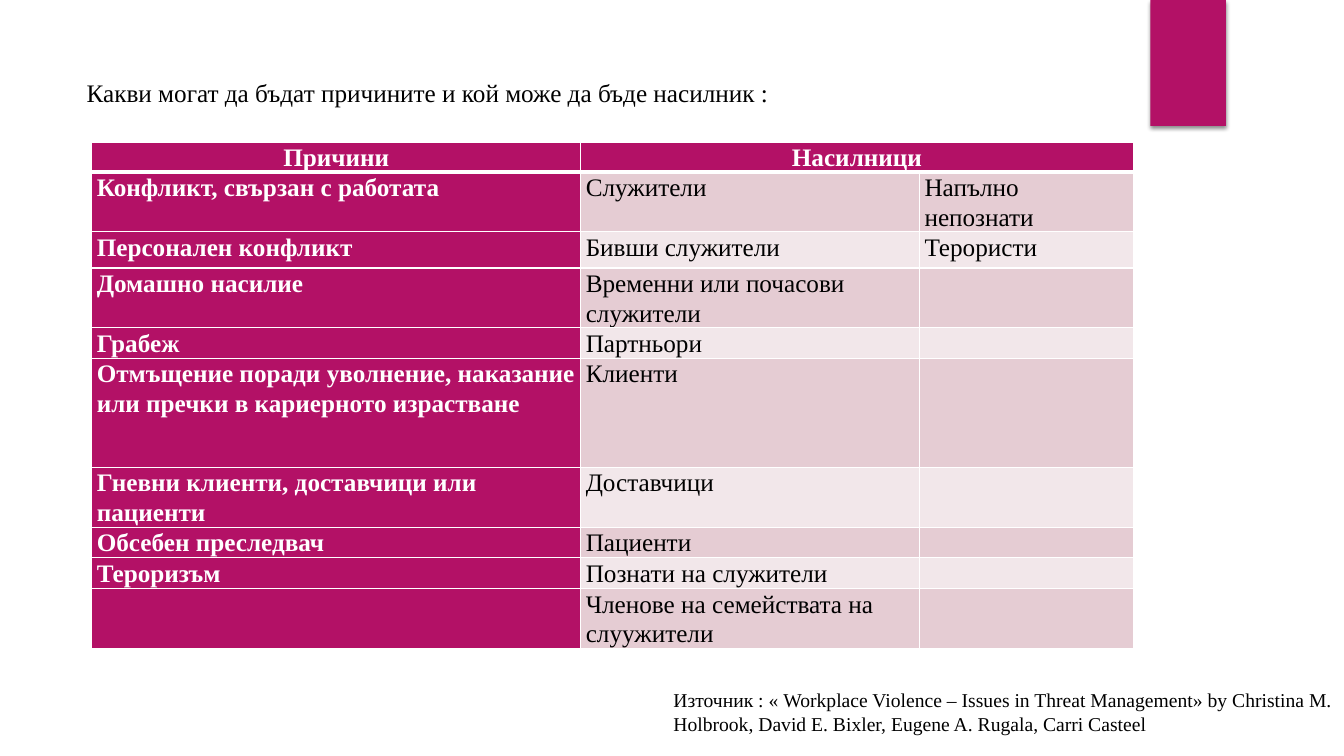
from lxml import etree
from pptx import Presentation
from pptx.dml.color import RGBColor
from pptx.enum.shapes import MSO_SHAPE
from pptx.enum.text import MSO_ANCHOR, MSO_AUTO_SIZE, PP_ALIGN
from pptx.oxml.ns import qn
from pptx.util import Inches, Pt

RECTANGLE = MSO_SHAPE.RECTANGLE
TOP = MSO_ANCHOR.TOP
LEFT, CENTER = PP_ALIGN.LEFT, PP_ALIGN.CENTER
NO_AUTOFIT = MSO_AUTO_SIZE.NONE

TITLE_ONLY_LAYOUT = 5
FONT_NAME = "Times New Roman"
ACCENT, WHITE, BLACK = "B31166", "FFFFFF", "000000"
BANDS = ("E5CCD3", "F2E7EA")

TITLE = "Какви могат да бъдат причините и кой може да бъде насилник :"
SOURCE = ("Източник : « Workplace Violence – Issues in Threat Management» "
          "by Christina M. Holbrook, David E. Bixler, Eugene A. Rugala, Carri Casteel")
COLUMN_WIDTHS = (4.85, 3.36, 2.12)
ROWS = [  # height, cause, two columns of offenders
    (0.17, "Причини", "Насилници", ""),
    (0.36, "Конфликт, свързан с работата", "Служители", "Напълно непознати"),
    (0.36, "Персонален конфликт", "Бивши служители", "Терористи"),
    (0.36, "Домашно насилие", "Временни или почасови служители", ""),
    (0.17, "Грабеж", "Партньори", ""),
    (1.08, "Отмъщение поради уволнение, наказание или пречки в кариерното израстване",
     "Клиенти", ""),
    (0.54, "Гневни клиенти, доставчици или пациенти", "Доставчици", ""),
    (0.17, "Обсебен преследвач", "Пациенти", ""),
    (0.17, "Тероризъм", "Познати на служители", ""),
    (0.36, "", "Членове на семействата на слуужители", ""),
]


def color(hex_value):
    return RGBColor.from_string(hex_value)


def set_attributes(target, values):
    for name, value in values.items():
        setattr(target, name, value)


def write_text(text_frame, text, size, text_color=BLACK, bold=False, **paragraph_format):
    paragraph = text_frame.paragraphs[0]
    set_attributes(paragraph, paragraph_format)
    if text:
        run = paragraph.add_run()
        run.text = text
        set_attributes(run.font, {"name": FONT_NAME, "size": Pt(size), "bold": bold})
        run.font.color.rgb = color(text_color)


def add_color(parent, hex_value):
    return etree.SubElement(parent, qn("a:srgbClr"), val=hex_value)


def add_title(slide):
    title = slide.shapes.title
    set_attributes(title, {"left": Inches(0.76), "top": Inches(0.72),
                           "width": Inches(10.07), "height": Inches(1.62)})
    set_attributes(title.text_frame, {"word_wrap": True, "vertical_anchor": TOP,
                                      "auto_size": NO_AUTOFIT})
    write_text(title.text_frame, TITLE, 18, alignment=LEFT, line_spacing=1.0)


def add_accent_block(slide):
    block = slide.shapes.add_shape(RECTANGLE, Inches(11.41), 0, Inches(0.75), Inches(1.25))
    block.fill.solid()
    block.fill.fore_color.rgb = color(ACCENT)
    block.line.fill.background()
    # Soft shadow below the block
    block.shadow.inherit = False
    effects = block.element.spPr.find(qn("a:effectLst"))
    shadow = etree.SubElement(effects, qn("a:outerShdw"), blurRad=str(Pt(3)),
                              dist=str(Pt(2)), dir="5400000", rotWithShape="0")
    etree.SubElement(add_color(shadow, BLACK), qn("a:alpha"), val="45000")


def add_borders(cell, widths):
    properties = cell._tc.get_or_add_tcPr()
    for side, width in widths.items():
        line = etree.SubElement(properties, qn(f"a:ln{side}"), w=str(Pt(width)))
        add_color(etree.SubElement(line, qn("a:solidFill")), WHITE)


def format_cell(cell, row, column, text):
    is_header = row == 0
    is_accent = is_header or column == 0
    set_attributes(cell, {"margin_left": Inches(0.05), "margin_right": Inches(0.05),
                          "margin_top": 0, "margin_bottom": 0})
    add_borders(cell, {"L": 1, "R": 1, "T": 3 if row == 1 else 1, "B": 3 if is_header else 1})
    cell.fill.solid()
    cell.fill.fore_color.rgb = color(ACCENT if is_accent else BANDS[(row - 1) % 2])
    write_text(cell.text_frame, text, 18, WHITE if is_accent else BLACK, is_accent,
               alignment=CENTER if is_header else LEFT,
               line_spacing=1.07, space_after=Pt(8))


def add_causes_table(slide):
    frame = slide.shapes.add_table(len(ROWS), len(COLUMN_WIDTHS), Inches(0.91), Inches(1.41),
                                   Inches(10.32), Inches(5.12))
    table = frame.table
    for column, width in zip(table.columns, COLUMN_WIDTHS):
        column.width = Inches(width)
    for row, (height, *texts) in enumerate(ROWS):
        table.rows[row].height = Inches(height)
        for column, text in enumerate(texts):
            format_cell(table.cell(row, column), row, column, text)
    table.cell(0, 1).merge(table.cell(0, 2))
    frame.height = Inches(5.12)


def add_source_note(slide):
    note = slide.shapes.add_textbox(Inches(6.58), Inches(6.78), Inches(7.25), Inches(0.57))
    note.text_frame.word_wrap = True
    write_text(note.text_frame, SOURCE, 14)


def main():
    presentation = Presentation()
    presentation.slide_width = Inches(13.33)
    presentation.slide_height = Inches(7.5)
    slide = presentation.slides.add_slide(presentation.slide_layouts[TITLE_ONLY_LAYOUT])
    add_title(slide)
    add_accent_block(slide)
    add_causes_table(slide)
    add_source_note(slide)
    presentation.save("out.pptx")


if __name__ == "__main__":
    main()
